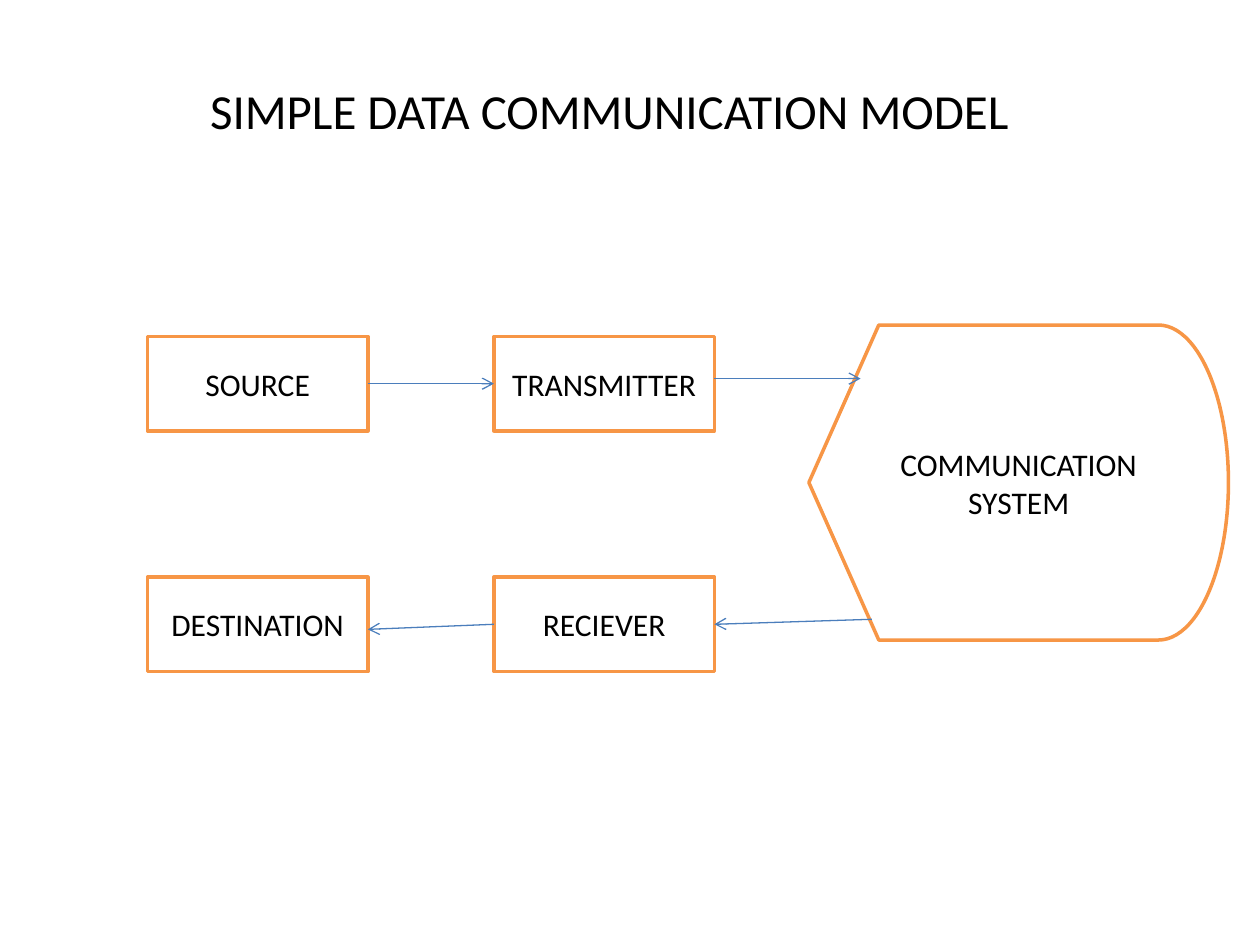
from dataclasses import dataclass

from lxml import etree
from pptx import Presentation
from pptx import util as u
from pptx.dml.color import RGBColor
from pptx.enum import shapes, text
from pptx.oxml import ns


@dataclass(frozen=True)
class Theme:
    font: str = "Calibri"
    ink: str = "000000"
    paper: str = "FFFFFF"
    border: str = "F79646"
    arrow: str = "4B7EBC"
    title_size: float = 28
    label_size: float = 18
    border_width: float = 2
    arrow_width: float = 0.75


THEME = Theme()
TITLE = "SIMPLE DATA COMMUNICATION MODEL"
STATIONS = [["SOURCE", "TRANSMITTER"],
            ["DESTINATION", "RECIEVER"]]
SYSTEM = "COMMUNICATION SYSTEM"

# Inches: a grid of two columns and two rows, with the system on the right
LEFT, TOP = 1.17, 2.67
BOX_WIDTH, BOX_HEIGHT = 1.75, 0.75
COLUMN_STEP, ROW_STEP = 2.75, 1.91
SYSTEM_AREA = (6.42, 2.58, 3.33, 2.5)
TITLE_AREA = (0.75, 0.25, 8.17, 1.25)

columns = [LEFT + i * COLUMN_STEP for i in range(2)]
rows = [TOP + i * ROW_STEP for i in range(2)]
ends = [x + BOX_WIDTH for x in columns]
send_y, return_y = [y + BOX_HEIGHT / 2 for y in rows]
DROP = 0.04  # slight slant of the return path

ARROWS = [
    ((ends[0], send_y), (columns[1], send_y)),
    ((ends[1], send_y - DROP), (6.83, send_y - DROP)),
    ((6.92, return_y - DROP), (ends[1], return_y)),
    ((columns[1], return_y), (ends[0], return_y + DROP)),
]


def inches(*values):
    return [u.Inches(value) for value in values]


def write(shape, content, size):
    frame = shape.text_frame
    frame.word_wrap = True
    frame.vertical_anchor = text.MSO_ANCHOR.MIDDLE
    para = frame.paragraphs[0]
    para.alignment = text.PP_ALIGN.CENTER
    span = para.add_run()
    span.text = content
    span.font.name = THEME.font
    span.font.size = u.Pt(size)
    span.font.color.rgb = RGBColor.from_string(THEME.ink)


def add_box(page, kind, area, label):
    box = page.shapes.add_shape(kind, *inches(*area))
    box.shadow.inherit = False
    box.fill.solid()
    box.fill.fore_color.rgb = RGBColor.from_string(THEME.paper)
    box.line.color.rgb = RGBColor.from_string(THEME.border)
    box.line.width = u.Pt(THEME.border_width)
    write(box, label, THEME.label_size)


def add_arrow(page, start, end):
    arrow = page.shapes.add_connector(
        shapes.MSO_CONNECTOR.STRAIGHT, *inches(*start, *end))
    arrow.line.color.rgb = RGBColor.from_string(THEME.arrow)
    arrow.line.width = u.Pt(THEME.arrow_width)
    etree.SubElement(arrow.line._get_or_add_ln(), ns.qn("a:tailEnd"), type="arrow")
    etree.SubElement(arrow._element.spPr, ns.qn("a:effectLst"))


def main():
    deck = Presentation()
    deck.slide_width, deck.slide_height = inches(10, 7.5)
    page = deck.slides.add_slide(deck.slide_layouts[5])

    title = page.shapes.title
    title.left, title.top, title.width, title.height = inches(*TITLE_AREA)
    write(title, TITLE, THEME.title_size)

    for y, labels in zip(rows, STATIONS):
        for x, label in zip(columns, labels):
            add_box(page, shapes.MSO_SHAPE.RECTANGLE,
                    (x, y, BOX_WIDTH, BOX_HEIGHT), label)
    add_box(page, shapes.MSO_SHAPE.FLOWCHART_DISPLAY, SYSTEM_AREA, SYSTEM)

    for start, end in ARROWS:
        add_arrow(page, start, end)
    deck.save("out.pptx")


if __name__ == "__main__":
    main()
